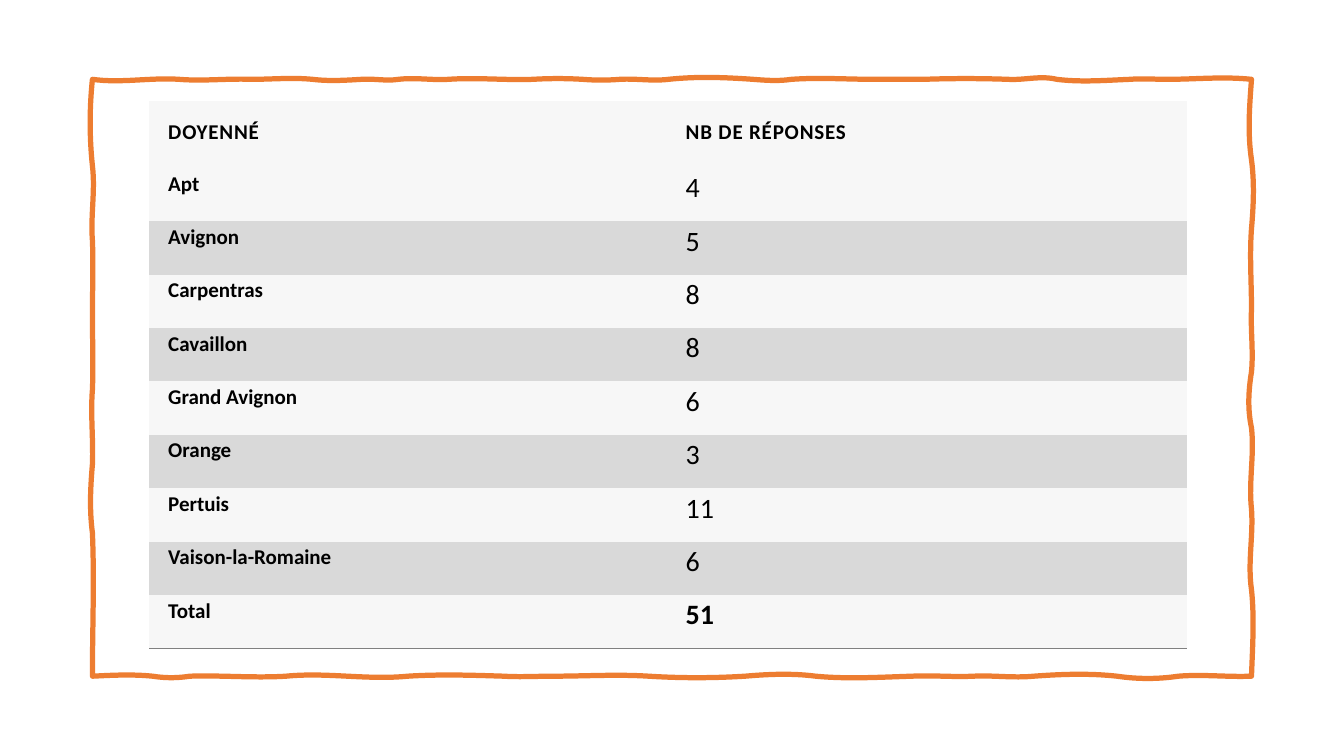
from dataclasses import dataclass

from lxml.etree import SubElement
from pptx import Presentation
from pptx.dml.color import RGBColor
from pptx.enum.text import MSO_ANCHOR as Anchor, PP_ALIGN as Align
from pptx.oxml import parse_xml
from pptx.oxml.ns import nsdecls, qn
from pptx.util import Cm, Pt


@dataclass(frozen=True)
class Theme:
    font: str = "Calibri"
    text: str = "000000"
    frame: str = "ED7D31"
    light: str = "F7F7F7"
    dark: str = "D9D9D9"
    rule: str = "808080"
    label_size: float = 15
    value_size: float = 20
    frame_width: float = 3.75
    header_spacing: float = 0.6


@dataclass(frozen=True)
class Box:
    left: float
    top: float
    width: float
    height: float


THEME = Theme()
FRAME_BOX = Box(2.33, 2, 29.21, 15.04)
TABLE_BOX = Box(3.76, 2.54, 26.15, 13.8)
HEADER_HEIGHT = 1.69
LABEL_WIDTH = 13.04
HEADER = ("DOYENNÉ", "NB DE RÉPONSES")
ANSWERS = {
    "Apt": 4,
    "Avignon": 5,
    "Carpentras": 8,
    "Cavaillon": 8,
    "Grand Avignon": 6,
    "Orange": 3,
    "Pertuis": 11,
    "Vaison-la-Romaine": 6,
}
WAVE_UNIT = 0.0254
BOTTOM_WAVES = [
    (5.2, -1, -2), (8.4, 2, 2), (16.7, -1, 2), (22, -2, -1),
    (27.2, 1, 2), (35.5, -2, -1), (39.7, 1, 0), (48, 0, -2),
    (56.3, 2, 2), (62.4, -2, -3), (70.7, 3, 1), (76, -1, 1),
    (81.2, -1, 2), (88.4, -2, -3), (93.7, 3, 3), (100, -2, 1),
]
RIGHT_WAVES = [
    (14.5, 1, 3), (28, -4, 2), (41.6, -3, 3), (51, -4, -3),
    (61.5, 2, -1), (75, 0, -2), (86.5, 2, 3), (100, -4, -2),
]
TOP_WAVES = [
    (7.3, -3, 0), (10.5, 0, -1), (16.8, 1, 3), (21, -4, 1),
    (28.3, -1, -1), (32.5, 0, 0), (39.7, 0, -2), (43, 2, 1),
    (50.3, -2, -3), (54.5, 2, -1), (57.7, 1, 1), (62, -1, -1),
    (69.3, 1, -2), (73.6, 1, -2), (76.8, 2, -1), (81, 1, 2),
    (86.3, -2, 0), (92.5, -1, 2), (100, -2, 4),
]
LEFT_WAVES = [
    (14.5, -3, -3), (27, 3, -2), (39.5, 1, 0), (52, 0, 1),
    (64.5, -2, 1), (76, -2, -3), (100, 2, 0),
]


def add_side(path, start, end, waves):
    (x0, y0), (x1, y1) = start, end
    horizontal = y0 == y1
    previous = 0
    for stop, first, second in waves:
        curve = SubElement(path, qn("a:cubicBezTo"))
        for part, offset in ((1 / 3, first), (2 / 3, second), (1, 0)):
            along = (previous + (stop - previous) * part) / 100
            bend = offset * WAVE_UNIT
            x = x0 + (x1 - x0) * along + (0 if horizontal else bend)
            y = y0 + (y1 - y0) * along + (bend if horizontal else 0)
            SubElement(curve, qn("a:pt"), x=str(int(Cm(x))), y=str(int(Cm(y))))
        previous = stop


def add_wavy_frame(slide, box):
    corners = [(0, box.height), (box.width, box.height), (box.width, 0), (0, 0)]
    points = [(Cm(box.left + x), Cm(box.top + y)) for x, y in corners]
    builder = slide.shapes.build_freeform(*points[0])
    builder.add_line_segments(points[1:], close=True)
    frame = builder.convert_to_shape()
    path = next(frame._element.iter(qn("a:path")))
    for segment in list(path)[1:]:
        path.remove(segment)
    sides = [BOTTOM_WAVES, RIGHT_WAVES, TOP_WAVES, LEFT_WAVES]
    for start, end, waves in zip(corners, corners[1:] + corners[:1], sides):
        add_side(path, start, end, waves)
    SubElement(path, qn("a:close"))
    frame.shadow.inherit = False
    frame.fill.background()
    frame.line.color.rgb = RGBColor.from_string(THEME.frame)
    frame.line.width = Pt(THEME.frame_width)


def fill_cell(cell, text, size, bold, color, header=False):
    cell.fill.solid()
    cell.fill.fore_color.rgb = RGBColor.from_string(color)
    cell.vertical_anchor = Anchor.TOP
    cell.margin_left = cell.margin_right = Cm(0.48)
    cell.margin_top = Cm(0.48 if header else 0.08)
    cell.margin_bottom = Cm(0.48 if header else 0.3)
    cell.text_frame.text = text
    paragraph = cell.text_frame.paragraphs[0]
    paragraph.alignment = Align.JUSTIFY
    run = paragraph.runs[0]
    run.font.name = THEME.font
    run.font.size = Pt(size)
    run.font.bold = bold
    run.font.color.rgb = RGBColor.from_string(THEME.text)
    if header:
        run.font._element.set("spc", str(round(THEME.header_spacing * 100)))


def add_bottom_rule(cell):
    border = parse_xml(
        f'<a:lnB {nsdecls("a")} w="{Pt(1)}"><a:solidFill>'
        f'<a:srgbClr val="{THEME.rule}"/></a:solidFill></a:lnB>'
    )
    cell._tc.get_or_add_tcPr().insert(0, border)


def add_answer_table(slide, box):
    rows = [*ANSWERS.items(), ("Total", sum(ANSWERS.values()))]
    graphic = slide.shapes.add_table(
        len(rows) + 1, 2, Cm(box.left), Cm(box.top), Cm(box.width), Cm(box.height)
    )
    table = graphic.table
    table.first_row = table.horz_banding = False
    style = table._tbl.tblPr.find(qn("a:tableStyleId"))
    style.text = "{2D5ABB26-0587-4C30-8999-92F81FD0307C}"
    table.columns[0].width = Cm(LABEL_WIDTH)
    table.columns[1].width = Cm(box.width - LABEL_WIDTH)
    table.rows[0].height = Cm(HEADER_HEIGHT)
    for column, heading in enumerate(HEADER):
        fill_cell(table.cell(0, column), heading, THEME.label_size, True, THEME.light, True)
    for index, (label, value) in enumerate(rows, start=1):
        table.rows[index].height = Cm((box.height - HEADER_HEIGHT) / len(rows))
        color = THEME.light if index % 2 else THEME.dark
        is_total = index == len(rows)
        fill_cell(table.cell(index, 0), label, THEME.label_size, True, color)
        fill_cell(table.cell(index, 1), str(value), THEME.value_size, is_total, color)
    for cell in table.rows[len(rows)].cells:
        add_bottom_rule(cell)


def main():
    presentation = Presentation()
    presentation.slide_width = Cm(33.87)
    presentation.slide_height = Cm(19.05)
    slide = presentation.slides.add_slide(presentation.slide_layouts[6])
    add_wavy_frame(slide, FRAME_BOX)
    add_answer_table(slide, TABLE_BOX)
    presentation.save("out.pptx")


if __name__ == "__main__":
    main()
